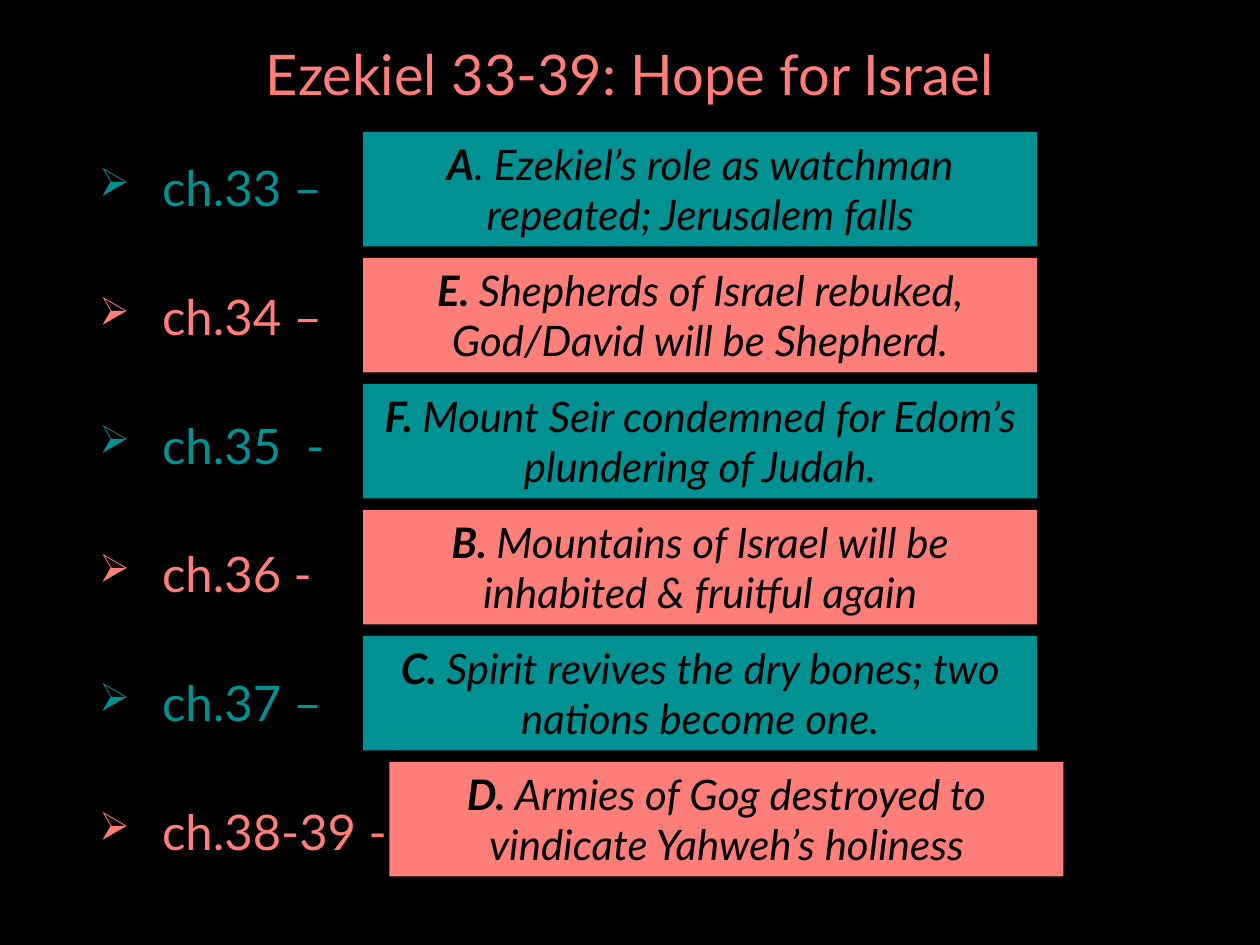
from lxml import etree
from pptx import Presentation, util as u
from pptx.dml.color import RGBColor
from pptx.enum import shapes, text
from pptx.oxml.ns import qn

BLACK = RGBColor(0x00, 0x00, 0x00)
TEAL = RGBColor(0x00, 0x91, 0x93)
CORAL = RGBColor(0xFF, 0x7E, 0x79)

# Chapter label, answer letter, answer text
CHAPTERS = [
    ("ch.33 –", "A", ". Ezekiel’s role as watchman repeated; Jerusalem falls"),
    ("ch.34 –", "E. ", "Shepherds of Israel rebuked, God/David will be Shepherd."),
    ("ch.35  -", "F. ", "Mount Seir condemned for Edom’s plundering of Judah."),
    ("ch.36 -", "B. ", "Mountains of Israel will be inhabited & fruitful again"),
    ("ch.37 –", "C. ", "Spirit revives the dry bones; two nations become one."),
    ("ch.38-39 -", "D. ", "Armies of Gog destroyed to vindicate Yahweh’s holiness"),
]
COLORS = [TEAL, CORAL]
MARGIN, TEXT_WIDTH = 1.75, 21.9
BOX_LEFT, BOX_TOP, BOX_PITCH = 7.32, 2.66, 2.54
LAST_SHIFT = 0.53  # the longest label pushes its box to the right


class Deck:
    font = "Lato"

    def __init__(self, prs):
        self.s = prs.slides.add_slide(prs.slide_layouts[6])
        fill = self.s.background.fill
        fill.solid()
        fill.fore_color.rgb = BLACK

    def style(self, p, size, color):
        p.font.name = self.font
        p.font.size = u.Pt(size)
        p.font.color.rgb = color

    def text_frame(self, left, top, width, height):
        sp = self.s.shapes.add_textbox(u.Cm(left), u.Cm(top), u.Cm(width), u.Cm(height))
        sp.text_frame.word_wrap = True
        return sp.text_frame

    def title(self, words):
        tf = self.text_frame(MARGIN, 0.41, TEXT_WIDTH, 2.29)
        tf.vertical_anchor = text.MSO_ANCHOR.MIDDLE
        p = tf.paragraphs[0]
        p.text = words
        p.alignment = text.PP_ALIGN.CENTER
        p.line_spacing = 0.9
        self.style(p, 32, CORAL)

    def bullets(self, labels):
        tf = self.text_frame(MARGIN, 3.05, TEXT_WIDTH, 15.65)
        for i, label in enumerate(labels):
            p = tf.paragraphs[0] if i == 0 else tf.add_paragraph()
            p.text = label
            p.space_before, p.space_after = u.Pt(4), u.Pt(36)
            self.style(p, 28, COLORS[i % 2])
            self.arrow_bullet(p)

    def arrow_bullet(self, p):
        pPr = p._p.get_or_add_pPr()
        indent = u.Cm(1.27)
        pPr.set("marL", str(indent))
        pPr.set("indent", str(-indent))
        size = etree.Element(qn("a:buSzPct"), val="80000")
        char = etree.Element(qn("a:buChar"), char="➢")
        pPr.find(qn("a:spcAft")).addnext(size)
        size.addnext(char)

    def answer(self, left, top, letter, words, color):
        sp = self.s.shapes.add_shape(
            shapes.MSO_SHAPE.RECTANGLE, u.Cm(left), u.Cm(top), u.Cm(13.59), u.Cm(2.31))
        sp.shadow.inherit = False
        sp.fill.solid()
        sp.fill.fore_color.rgb = color
        sp.line.fill.background()
        tf = sp.text_frame
        tf.word_wrap = True
        tf.auto_size = text.MSO_AUTO_SIZE.SHAPE_TO_FIT_TEXT
        tf.vertical_anchor = text.MSO_ANCHOR.TOP
        p = tf.paragraphs[0]
        p.alignment = text.PP_ALIGN.CENTER
        self.style(p, 24, BLACK)
        p.font.italic = True
        for part, bold in ((letter, True), (words, False)):
            r = p.add_run()
            r.text = part
            r.font.bold = bold


def main():
    prs = Presentation()
    prs.slide_width, prs.slide_height = u.Cm(25.4), u.Cm(19.05)
    deck = Deck(prs)

    # Title and chapter list
    deck.title("Ezekiel 33-39: Hope for Israel")
    deck.bullets([label for label, _, _ in CHAPTERS])

    # Answer boxes, one per chapter
    for i, (_, letter, words) in enumerate(CHAPTERS):
        left = BOX_LEFT + (LAST_SHIFT if i == len(CHAPTERS) - 1 else 0)
        deck.answer(left, BOX_TOP + i * BOX_PITCH, letter, words, COLORS[i % 2])

    prs.save("out.pptx")


if __name__ == "__main__":
    main()
